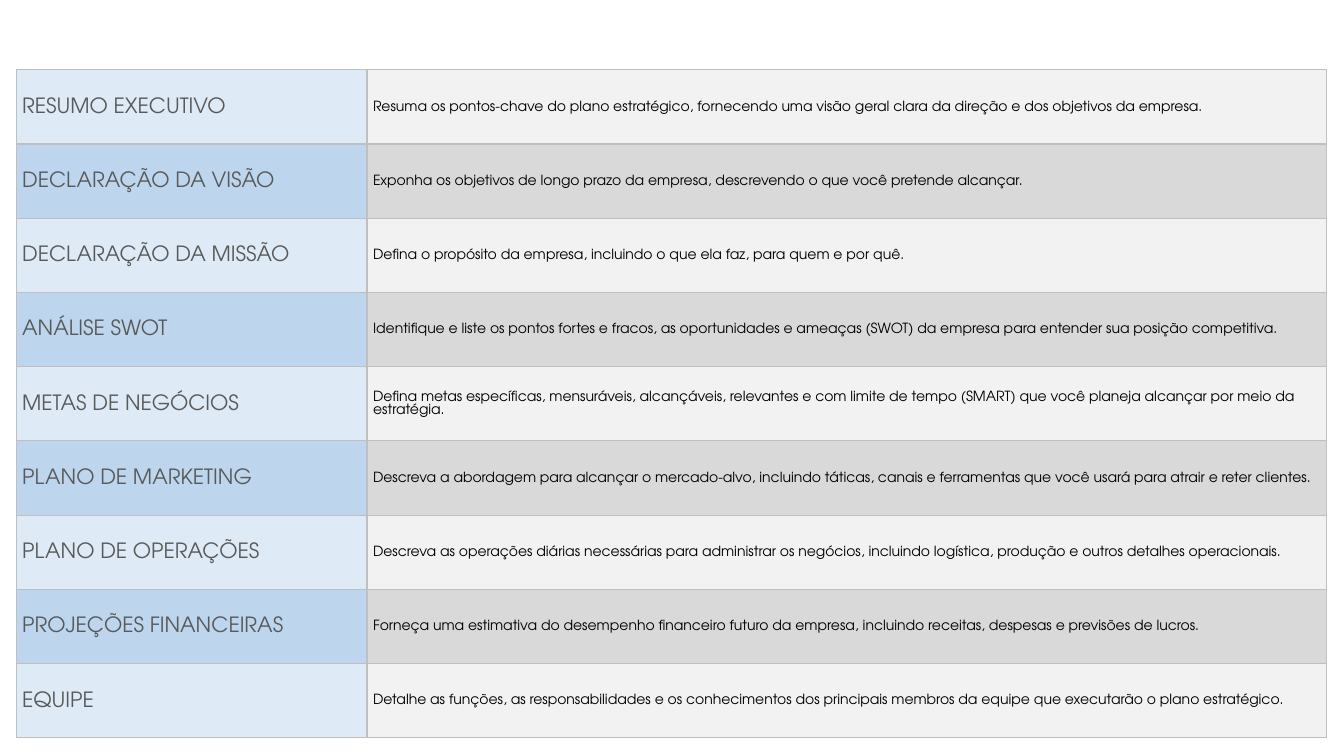
from dataclasses import dataclass

from lxml.etree import SubElement
from pptx import Presentation
from pptx.dml.color import RGBColor
from pptx.enum.text import MSO_ANCHOR
from pptx.oxml.ns import qn
from pptx.util import Cm, Pt


@dataclass(frozen=True)
class Theme:
    """Colours, font and type sizes of the slide."""

    font: str = "TeX Gyre Adventor"
    section_size: int = 15
    guidance_size: int = 10
    section_color: str = "595959"
    guidance_color: str = "000000"
    section_fills: tuple = ("DEEAF6", "BDD6EE")
    guidance_fills: tuple = ("F2F2F2", "D9D9D9")
    border: str = "BFBFBF"
    border_width: int = 1


THEME = Theme()

PLAN_SECTIONS = [
    ("RESUMO EXECUTIVO",
     "Resuma os pontos-chave do plano estratégico, fornecendo uma visão geral clara da direção "
     "e dos objetivos da empresa."),
    ("DECLARAÇÃO DA VISÃO",
     "Exponha os objetivos de longo prazo da empresa, descrevendo o que você pretende alcançar."),
    ("DECLARAÇÃO DA MISSÃO",
     "Defina o propósito da empresa, incluindo o que ela faz, para quem e por quê."),
    ("ANÁLISE SWOT",
     "Identifique e liste os pontos fortes e fracos, as oportunidades e ameaças (SWOT) da empresa "
     "para entender sua posição competitiva."),
    ("METAS DE NEGÓCIOS",
     "Defina metas específicas, mensuráveis, alcançáveis, relevantes e com limite de tempo (SMART) "
     "que você planeja alcançar por meio da estratégia."),
    ("PLANO DE MARKETING",
     "Descreva a abordagem para alcançar o mercado-alvo, incluindo táticas, canais e ferramentas "
     "que você usará para atrair e reter clientes."),
    ("PLANO DE OPERAÇÕES",
     "Descreva as operações diárias necessárias para administrar os negócios, incluindo logística, "
     "produção e outros detalhes operacionais."),
    ("PROJEÇÕES FINANCEIRAS",
     "Forneça uma estimativa do desempenho financeiro futuro da empresa, incluindo receitas, "
     "despesas e previsões de lucros."),
    ("EQUIPE",
     "Detalhe as funções, as responsabilidades e os conhecimentos dos principais membros da equipe "
     "que executarão o plano estratégico."),
]


def add_borders(cell):
    """Draw the four borders of a cell."""
    properties = cell._tc.get_or_add_tcPr()
    for side in ("a:lnL", "a:lnR", "a:lnT", "a:lnB"):
        border = SubElement(properties, qn(side), w=str(Pt(THEME.border_width)))
        fill = SubElement(border, qn("a:solidFill"))
        SubElement(fill, qn("a:srgbClr"), val=THEME.border)


def write_cell(cell, text, size, color, fill):
    """Write one styled cell of the plan."""
    add_borders(cell)
    cell.fill.solid()
    cell.fill.fore_color.rgb = RGBColor.from_string(fill)
    cell.vertical_anchor = MSO_ANCHOR.MIDDLE
    cell.margin_left = cell.margin_right = Cm(0.15)
    cell.margin_top = cell.margin_bottom = Cm(0)
    cell.text = text
    paragraph = cell.text_frame.paragraphs[0]
    paragraph.line_spacing = 1.07
    paragraph.font.name = THEME.font
    paragraph.font.size = Pt(size)
    paragraph.font.color.rgb = RGBColor.from_string(color)


def add_plan_table(slide):
    """Add the table of plan sections with alternating row fills."""
    section_width, guidance_width, row_height = Cm(8.84), Cm(24.18), Cm(1.87)
    plan = slide.shapes.add_table(
        len(PLAN_SECTIONS), 2, Cm(0.41), Cm(1.76),
        section_width + guidance_width, row_height * len(PLAN_SECTIONS)).table
    plan.first_row = plan.horz_banding = False
    plan.columns[0].width = section_width
    plan.columns[1].width = guidance_width
    for row, (section, guidance) in enumerate(PLAN_SECTIONS):
        plan.rows[row].height = row_height
        write_cell(plan.cell(row, 0), section, THEME.section_size,
                   THEME.section_color, THEME.section_fills[row % 2])
        write_cell(plan.cell(row, 1), guidance, THEME.guidance_size,
                   THEME.guidance_color, THEME.guidance_fills[row % 2])


def main():
    """Build and save the strategic plan slide."""
    presentation = Presentation()
    presentation.slide_width = Cm(33.87)
    presentation.slide_height = Cm(19.05)
    slide = presentation.slides.add_slide(presentation.slide_layouts[6])
    add_plan_table(slide)
    presentation.save("out.pptx")


if __name__ == "__main__":
    main()
